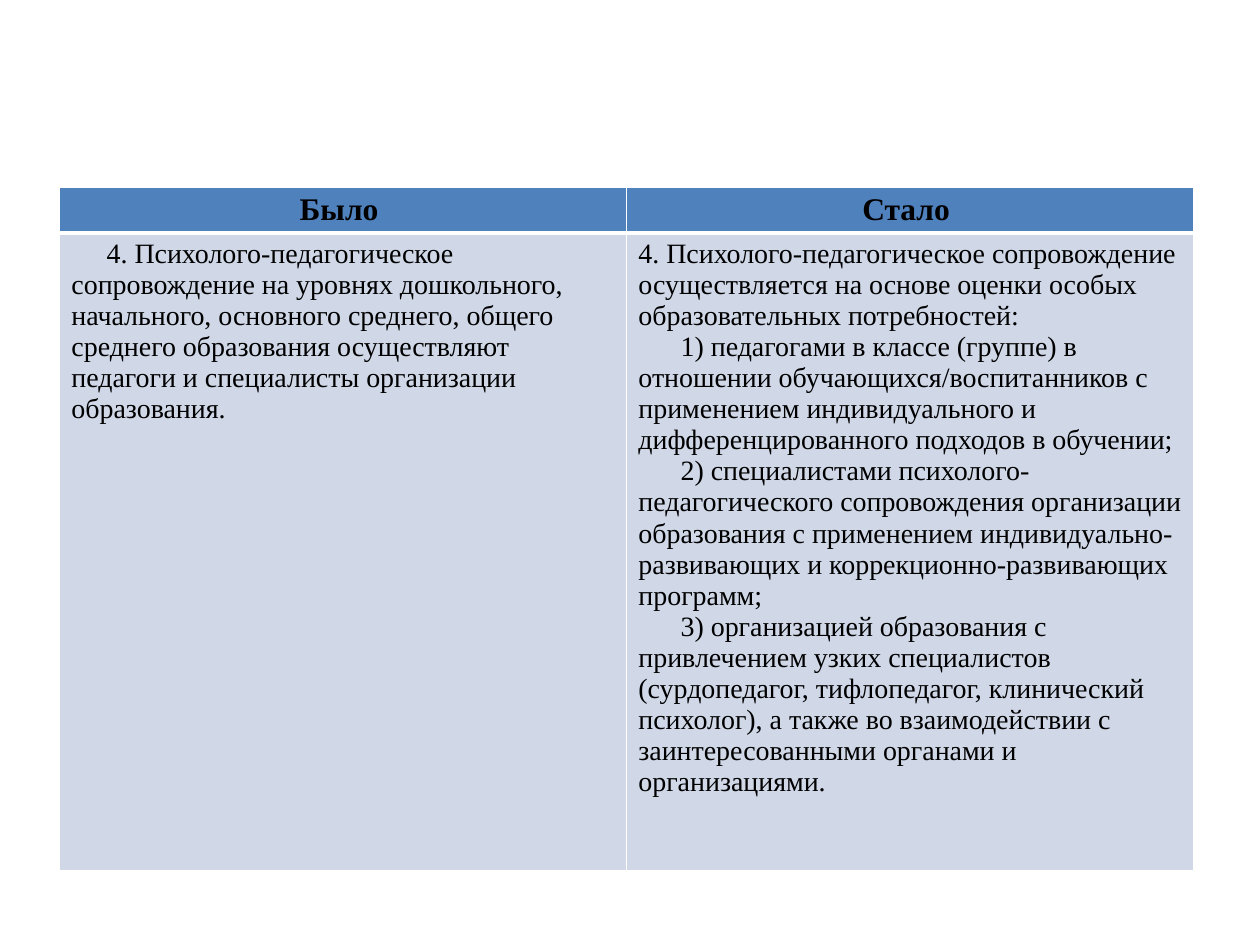
from dataclasses import dataclass

from lxml.etree import SubElement
from pptx import Presentation
from pptx.dml.color import RGBColor
from pptx.enum.text import PP_ALIGN
from pptx.oxml.ns import qn
from pptx.util import Cm, Pt


@dataclass(frozen=True)
class Theme:
    font: str = "Times New Roman"
    header_size: int = 18
    body_size: int = 16
    text: str = "000000"
    header_fill: str = "4F81BD"
    body_fill: str = "D0D8E8"
    border: str = "FFFFFF"
    thin_line: int = 1
    thick_line: int = 3


THEME = Theme()

HEADERS = ["Было ", "Стало "]

# Each paragraph: first-line indent in centimetres, text
BEFORE = [
    (0.71, "4. Психолого-педагогическое сопровождение на уровнях дошкольного, "
           "начального, основного среднего, общего среднего образования "
           "осуществляют педагоги и специалисты организации образования."),
]
AFTER = [
    (0, "4. Психолого-педагогическое сопровождение осуществляется на основе "
        "оценки особых образовательных потребностей:"),
    (0.85, "1) педагогами в классе (группе) в отношении "
           "обучающихся/воспитанников с применением индивидуального и "
           "дифференцированного подходов в обучении;"),
    (0.85, "2) специалистами психолого-педагогического сопровождения "
           "организации образования с применением индивидуально-развивающих "
           "и коррекционно-развивающих программ;"),
    (0.85, "3) организацией образования с привлечением узких специалистов "
           "(сурдопедагог, тифлопедагог, клинический психолог), а также во "
           "взаимодействии с заинтересованными органами и организациями."),
]


def set_borders(cell, top, bottom):
    """Draw the four cell borders; sides are thin, top and bottom are given."""
    properties = cell._tc.get_or_add_tcPr()
    widths = {"lnL": THEME.thin_line, "lnR": THEME.thin_line,
              "lnT": top, "lnB": bottom}
    for position, (tag, width) in enumerate(widths.items()):
        line = SubElement(properties, qn(f"a:{tag}"), w=str(Pt(width)))
        fill = SubElement(line, qn("a:solidFill"))
        SubElement(fill, qn("a:srgbClr"), val=THEME.border)
        properties.insert(position, line)  # borders come before the cell fill


def fill_cell(cell, paragraphs, color, size, bold=False, alignment=PP_ALIGN.LEFT):
    cell.fill.solid()
    cell.fill.fore_color.rgb = RGBColor.from_string(color)
    cell.margin_left = cell.margin_right = Cm(0.24)
    cell.margin_top = cell.margin_bottom = Cm(0.1)
    frame = cell.text_frame
    for index, (indent, text) in enumerate(paragraphs):
        paragraph = frame.add_paragraph() if index else frame.paragraphs[0]
        paragraph.alignment = alignment
        properties = paragraph._p.get_or_add_pPr()
        properties.set("marL", "0")
        properties.set("indent", str(Cm(indent)))
        run = paragraph.add_run()
        run.text = text
        run.font.name = THEME.font
        run.font.size = Pt(size)
        run.font.bold = bold
        run.font.color.rgb = RGBColor.from_string(THEME.text)


def add_comparison_table(slide, left, top, width, height):
    header_height = Cm(0.93)
    table = slide.shapes.add_table(2, 2, left, top, width, height).table
    table.rows[0].height = header_height
    table.rows[1].height = height - header_height

    for column, (header, body) in enumerate(zip(HEADERS, (BEFORE, AFTER))):
        table.columns[column].width = width // 2
        # Header row
        cell = table.cell(0, column)
        fill_cell(cell, [(0, header)], THEME.header_fill, THEME.header_size,
                  bold=True, alignment=PP_ALIGN.CENTER)
        set_borders(cell, THEME.thin_line, THEME.thick_line)
        # Body row
        cell = table.cell(1, column)
        fill_cell(cell, body, THEME.body_fill, THEME.body_size)
        set_borders(cell, THEME.thick_line, THEME.thin_line)


def main():
    presentation = Presentation()
    presentation.slide_width = Cm(25.4)
    presentation.slide_height = Cm(19.05)
    slide = presentation.slides.add_slide(presentation.slide_layouts[6])
    add_comparison_table(slide, Cm(1.2), Cm(3.77), Cm(22.86), Cm(13.79))
    presentation.save("out.pptx")


if __name__ == "__main__":
    main()
